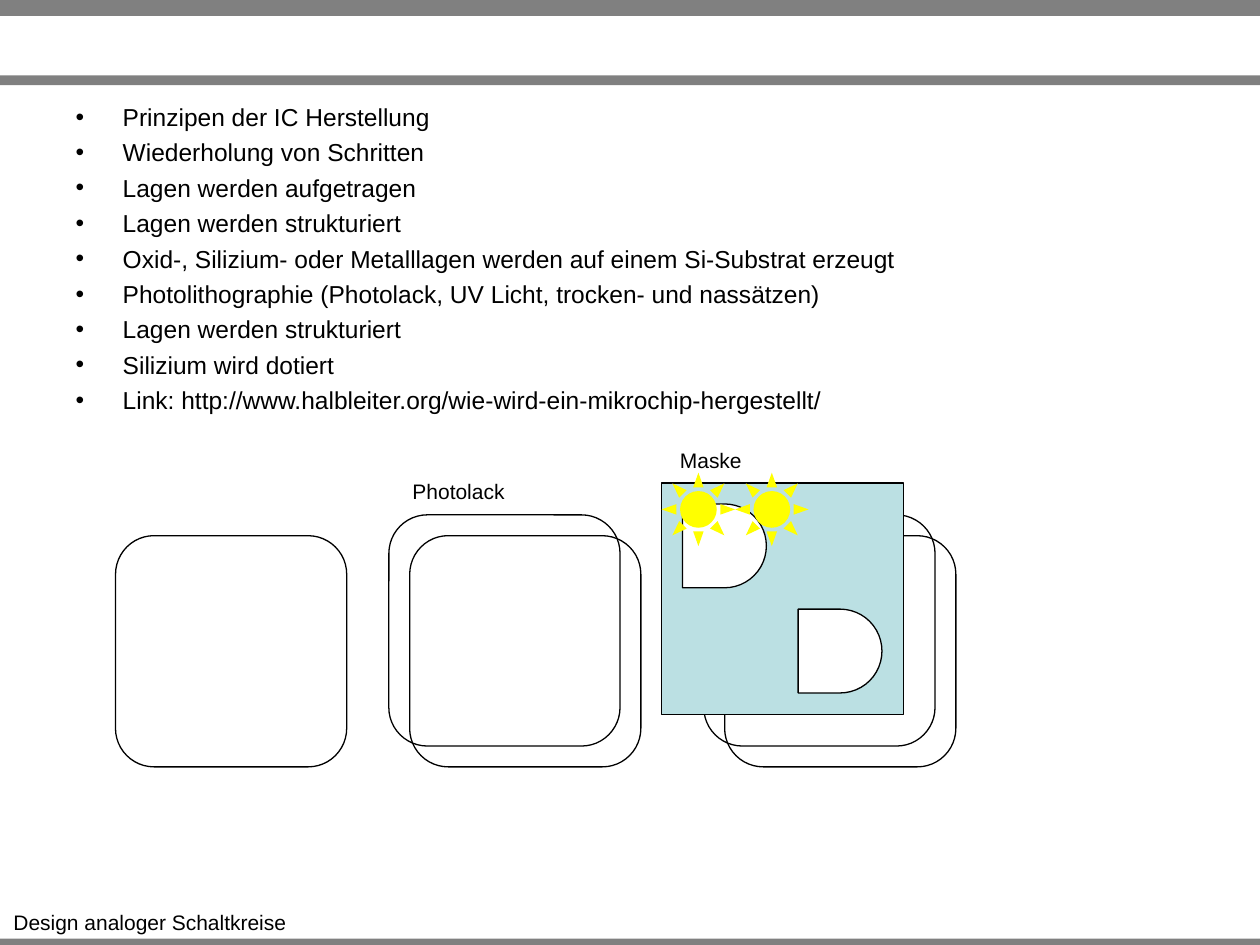
"""Build a slide on the principles of IC production."""
import dataclasses

import pptx
import pptx.dml.color
import pptx.enum.shapes
import pptx.enum.text
import pptx.util
from lxml import etree

Cm = pptx.util.Cm
Kind = pptx.enum.shapes.MSO_SHAPE
Align = pptx.enum.text.PP_ALIGN


@dataclasses.dataclass(frozen=True)
class Theme:
    font: str = "Arial"
    ink: str = "000000"
    bar: str = "808080"
    mask: str = "BBE0E3"
    hole: str = "FFFFFF"
    sun: str = "FFFF00"
    body: int = 14
    label: int = 12
    gap: float = 3.4
    line: float = 0.75


THEME = Theme()
WIDTH, HEIGHT = 25.4, 19.05
WAFER, SHIFT = 4.66, 0.42
HOLE, SUN = 1.69, 1.48

POINTS = [
    "Prinzipen der IC Herstellung",
    "Wiederholung von Schritten",
    "Lagen werden aufgetragen",
    "Lagen werden strukturiert",
    "Oxid-, Silizium- oder Metalllagen werden auf einem Si-Substrat erzeugt",
    "Photolithographie (Photolack, UV Licht, trocken- und nassätzen)",
    "Lagen werden strukturiert",
    "Silizium wird dotiert",
    "Link: http://www.halbleiter.org/wie-wird-ein-mikrochip-hergestellt/",
]


def color(code):
    return pptx.dml.color.RGBColor.from_string(code)


def write(para, text, size=THEME.label, align=Align.CENTER, before=0):
    para.alignment = align
    para.space_before = pptx.util.Pt(before)
    run = para.add_run()
    run.text = text
    run.font.name = THEME.font
    run.font.size = pptx.util.Pt(size)
    run.font.color.rgb = color(THEME.ink)


def bullet(para, indent):
    props = para._p.get_or_add_pPr()
    props.set("marL", str(Cm(indent)))
    props.set("indent", str(-Cm(indent)))
    mark = etree.SubElement(props, pptx.oxml.ns.qn("a:buChar"))
    mark.set("char", "•")


def points(slide):
    slide.shapes.title.element.getparent().remove(slide.shapes.title.element)
    body = slide.placeholders[1]
    body.left, body.top = Cm(1.27), Cm(1.93)
    body.width, body.height = Cm(22.86), Cm(4.66)
    frame = body.text_frame
    frame.auto_size = pptx.enum.text.MSO_AUTO_SIZE.NONE
    for i, text in enumerate(POINTS):
        para = frame.add_paragraph() if i else frame.paragraphs[0]
        bullet(para, 0.95)
        write(para, text, size=THEME.body, align=Align.LEFT,
              before=THEME.gap if i else 0)


def label(slide, text, left, top, width):
    box = slide.shapes.add_textbox(Cm(left), Cm(top), Cm(width), Cm(0.76))
    box.text_frame.word_wrap = False
    write(box.text_frame.paragraphs[0], text)


def shape(slide, kind, left, top, width, height, fill=None, line=None):
    item = slide.shapes.add_shape(kind, Cm(left), Cm(top), Cm(width), Cm(height))
    item.shadow.inherit = False
    if fill:
        item.fill.solid()
        item.fill.fore_color.rgb = color(fill)
    else:
        item.fill.background()
    if line:
        item.line.color.rgb = color(line)
        item.line.width = pptx.util.Pt(THEME.line)
    else:
        item.line.fill.background()


def bars(slide):
    for top, height in ((18.92, 0.2), (0, 0.32), (1.52, 0.2)):
        shape(slide, Kind.RECTANGLE, 0, top, WIDTH, min(height, HEIGHT - top),
              fill=THEME.bar)


def wafer(slide, left, coated=True):
    for step in range(2 if coated else 1):
        shape(slide, Kind.ROUNDED_RECTANGLE, left - step * SHIFT,
              10.8 - step * SHIFT, WAFER, WAFER, line=THEME.ink)


def mask(slide, left, top):
    shape(slide, Kind.RECTANGLE, left, top, 4.87, WAFER,
          fill=THEME.mask, line=THEME.ink)
    for i in range(2):
        shape(slide, Kind.FLOWCHART_DELAY, left + SHIFT + 2.33 * i,
              top + SHIFT + 2.12 * i, HOLE, HOLE,
              fill=THEME.hole, line=THEME.ink)


def main():
    deck = pptx.Presentation()
    deck.slide_width, deck.slide_height = Cm(WIDTH), Cm(HEIGHT)
    slide = deck.slides.add_slide(deck.slide_layouts[1])
    bars(slide)
    label(slide, "Design analoger Schaltkreise", 0, 18.21, 6.05)
    points(slide)
    wafer(slide, 2.33, coated=False)
    wafer(slide, 8.26)
    wafer(slide, 14.61)
    mask(slide, 13.34, 9.74)
    label(slide, "Photolack", 8.05, 9.53, 2.39)
    label(slide, "Maske", 13.44, 8.89, 1.78)
    for i in range(2):
        shape(slide, Kind.SUN, 13.34 + i * SUN, 9.53, SUN, SUN, fill=THEME.sun)
    deck.save("out.pptx")


if __name__ == "__main__":
    main()
